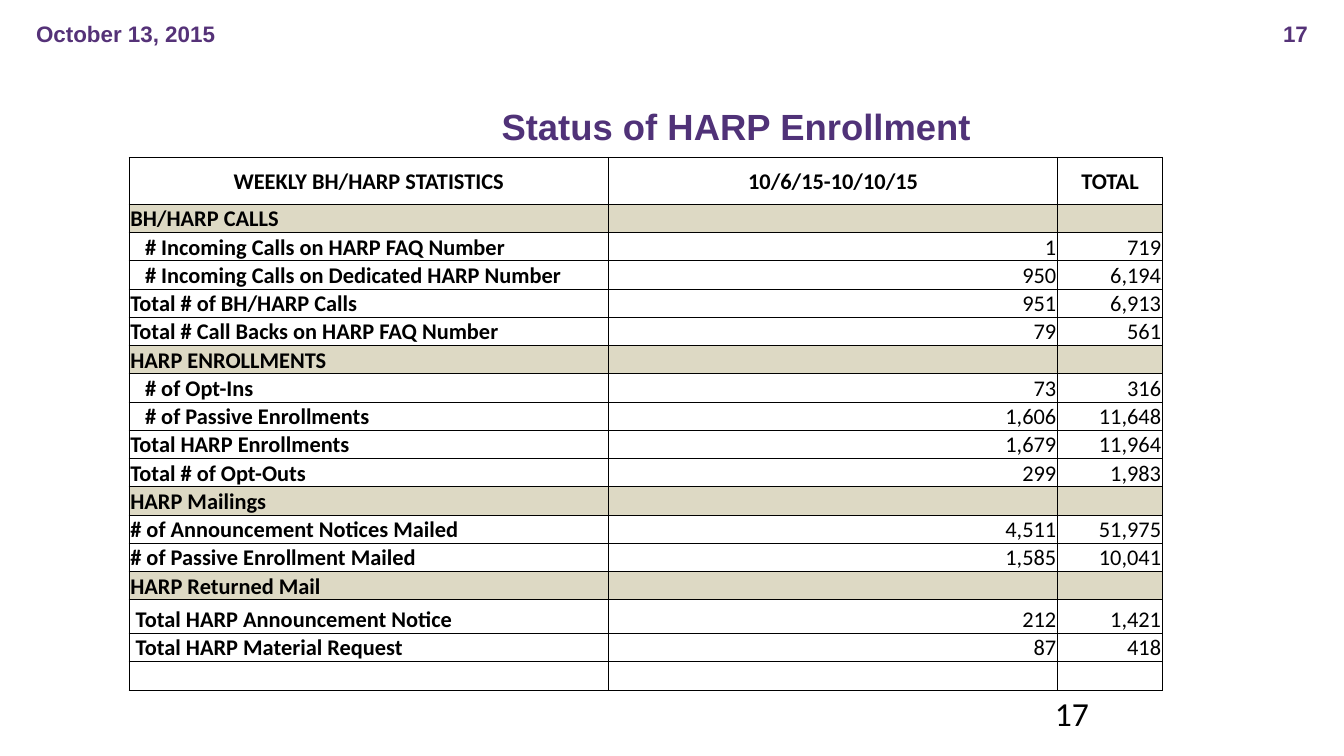
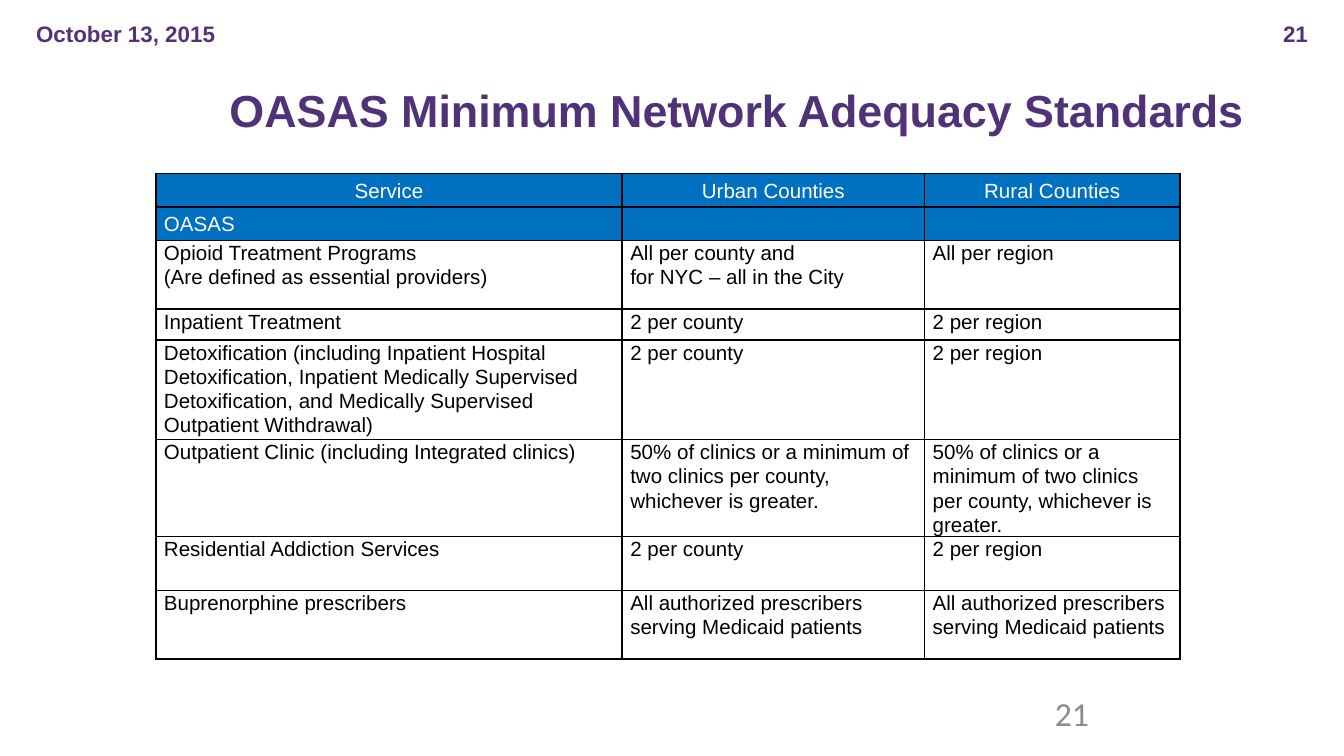
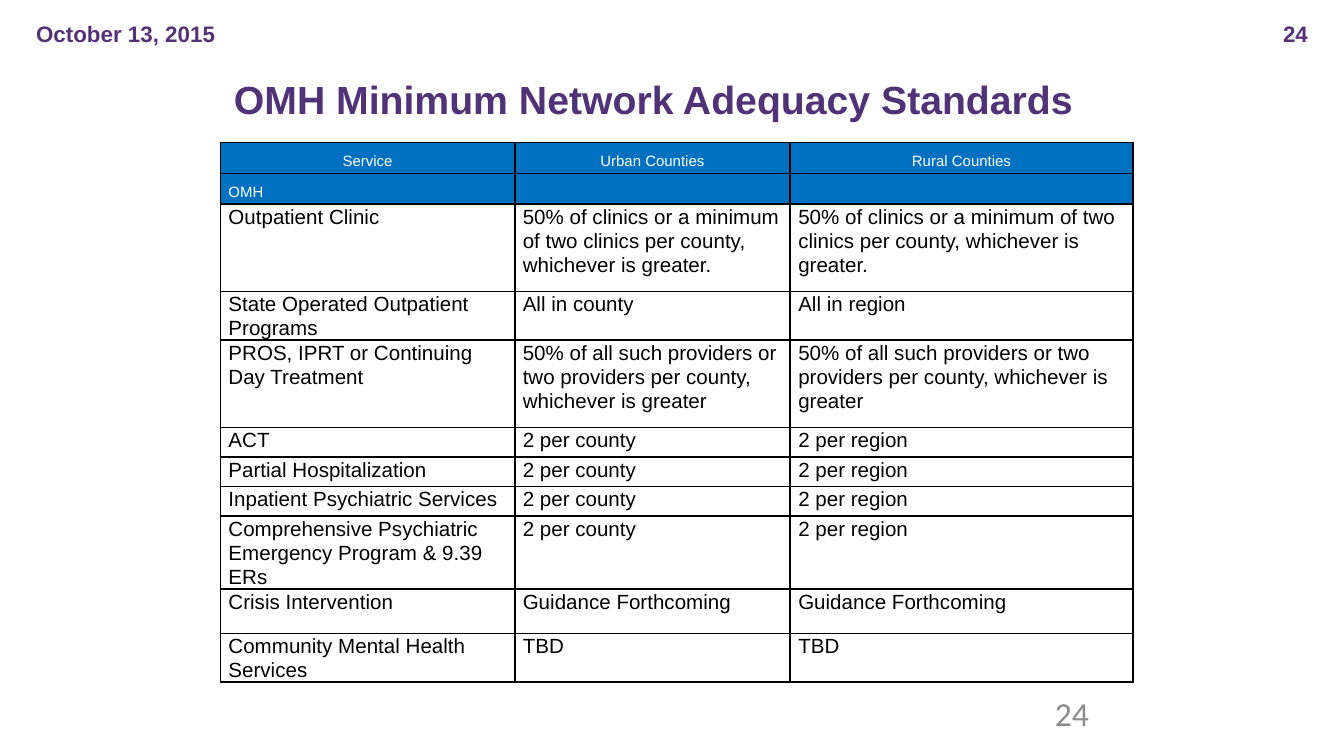
from dataclasses import dataclass

import lxml.etree
import pptx
import pptx.dml.color
import pptx.enum.text
import pptx.oxml.ns
import pptx.util

ALIGN = pptx.enum.text.PP_ALIGN
ANCHOR = pptx.enum.text.MSO_ANCHOR
inch = pptx.util.Inches


@dataclass(frozen=True)
class Theme:
    title: str = "503278"
    mark: str = "553278"
    ink: str = "000000"
    grey: str = "8C8C8C"
    paper: str = "FFFFFF"
    blue: str = "0070C0"
    sand: str = "DDD9C4"
    head: str = "Arial"
    body: str = "Calibri"
    small: float = 8
    cell: float = 11
    note: float = 12
    page: float = 18
    lead: float = 13


THEME = Theme()
WIDE = 10
HIGH = WIDE * 9 / 16
DATE = "October 13, 2015"

CALLS = [
    ("WEEKLY BH/HARP STATISTICS", "10/6/15-10/10/15", "TOTAL"),
    ("BH/HARP CALLS", "", ""),
    ("# Incoming Calls on HARP FAQ Number", "1", "719"),
    ("# Incoming Calls on Dedicated HARP Number", "950", "6,194"),
    ("Total # of BH/HARP Calls", "951", "6,913"),
    ("Total # Call Backs on HARP FAQ Number", "79", "561"),
    ("HARP ENROLLMENTS", "", ""),
    ("# of Opt-Ins", "73", "316"),
    ("# of Passive Enrollments", "1,606", "11,648"),
    ("Total HARP Enrollments", "1,679", "11,964"),
    ("Total # of Opt-Outs", "299", "1,983"),
    ("HARP Mailings", "", ""),
    ("# of Announcement Notices Mailed", "4,511", "51,975"),
    ("# of Passive Enrollment Mailed", "1,585", "10,041"),
    ("HARP Returned Mail", "", ""),
    ("Total HARP Announcement Notice", "212", "1,421"),
    ("Total HARP Material Request", "87", "418"),
    ("", "", ""),
]
INDENT = {2: 0.11, 3: 0.11, 7: 0.11, 8: 0.11, 15: 0.04, 16: 0.04}

HEADS = ("Service", "Urban Counties", "Rural Counties")
PAIR = ("2 per county", "2 per region")
HALF = ("50% of clinics or a minimum of two clinics per county, whichever is greater.",) * 2
SUCH = ("50% of all such providers or two providers per county, whichever is greater",) * 2

OASAS = [
    HEADS,
    ("OASAS", "", ""),
    ("Opioid Treatment Programs\n(Are defined as essential providers)",
     "All per county and\nfor NYC – all in the City", "All per region"),
    ("Inpatient Treatment", *PAIR),
    ("Detoxification (including Inpatient Hospital Detoxification, Inpatient "
     "Medically Supervised Detoxification, and Medically Supervised "
     "Outpatient Withdrawal)", *PAIR),
    ("Outpatient Clinic (including Integrated clinics)", *HALF),
    ("Residential Addiction Services", *PAIR),
    ("Buprenorphine prescribers",
     *("All authorized prescribers serving Medicaid patients",) * 2),
]
OMH = [
    HEADS,
    ("OMH", "", ""),
    ("Outpatient Clinic", *HALF),
    ("State Operated Outpatient Programs", "All in county", "All in region"),
    ("PROS, IPRT or Continuing Day Treatment", *SUCH),
    ("ACT", *PAIR),
    ("Partial Hospitalization", *PAIR),
    ("Inpatient Psychiatric Services", *PAIR),
    ("Comprehensive Psychiatric Emergency Program & 9.39 ERs", *PAIR),
    ("Crisis Intervention", *("Guidance Forthcoming",) * 2),
    ("Community Mental Health Services", *("TBD",) * 2),
]


def stats(row, col):
    top, group = row == 0, CALLS[row][0] and not CALLS[row][1]
    side = ALIGN.CENTER if top else ALIGN.RIGHT if col else ALIGN.LEFT
    pad = 0.01 + (INDENT.get(row, 0) if col == 0 else 0)
    return dict(fill=THEME.sand if group else None, pads=(pad, 0.01, 0.01, 0),
                anchor=ANCHOR.MIDDLE if top else ANCHOR.BOTTOM, align=side,
                font=THEME.body, size=THEME.note, bold=top or col == 0)


def norms(size):
    def look(row, col):
        top = row < 2
        return dict(fill=THEME.blue if top else None, pads=(0.06, 0, 0.06, 0),
                    anchor=ANCHOR.MIDDLE if top else ANCHOR.TOP,
                    align=ALIGN.LEFT if row else ALIGN.CENTER,
                    size=size if top else THEME.cell, lead=THEME.lead,
                    color=THEME.paper if top else THEME.ink)
    return look


SLIDES = [
    dict(page="17", tone=THEME.ink, title="Status of HARP Enrollment",
         box=(0.96, 0.71, 9.04, 0.45), size=19.5, align=ALIGN.CENTER,
         data=CALLS, at=(0.96, 1.17), cols=(3.57, 3.34, 0.78),
         rows=[0.35] + [0.21] * 14 + [0.25] + [0.21] * 2, line=0.5, look=stats),
    dict(page="21", tone=THEME.grey, title="OASAS Minimum Network Adequacy Standards",
         box=(0.96, 0.59, 9.04, 0.45), size=24, align=ALIGN.CENTER,
         data=OASAS, at=(1.16, 1.29), cols=(3.47, 2.25, 1.9),
         rows=[0.25, 0.25, 0.51, 0.23, 0.74, 0.72, 0.4, 0.51],
         line=1, look=norms(THEME.cell)),
    dict(page="24", tone=THEME.grey, title="OMH Minimum Network Adequacy Standards",
         box=(1.64, 0.51, 6.56, 0.45), size=21, align=ALIGN.LEFT,
         data=OMH, at=(1.64, 1.06), cols=(2.19, 2.05, 2.55),
         rows=[0.23, 0.23, 0.65, 0.36, 0.65] + [0.22] * 3 + [0.54, 0.33, 0.36],
         line=1, look=norms(THEME.small)),
]


def write(frame, text, *, size, font=THEME.head, color=THEME.ink, bold=False,
          align=ALIGN.LEFT, anchor=ANCHOR.MIDDLE, lead=None):
    frame.word_wrap = True
    frame.vertical_anchor = anchor
    frame.text = text
    for para in frame.paragraphs:
        para.alignment = align
        if lead:
            para.line_spacing = pptx.util.Pt(lead)
        for run in para.runs:
            run.font.size = pptx.util.Pt(size)
            run.font.name = font
            run.font.bold = bold
            run.font.color.rgb = pptx.dml.color.RGBColor.from_string(color)
        if not para.runs:
            lxml.etree.SubElement(para._p, pptx.oxml.ns.qn("a:endParaRPr"),
                                  sz=str(int(size * 100)))


def label(slide, text, box, **form):
    shape = slide.shapes.add_textbox(*map(inch, box))
    write(shape.text_frame, text, **form)
    return shape


def edge(cell, width):
    props = cell._tc.get_or_add_tcPr()
    name = pptx.oxml.ns.qn
    for side in "LRTB":
        line = lxml.etree.SubElement(props, name("a:ln" + side),
                                     w=str(pptx.util.Pt(width)))
        fill = lxml.etree.SubElement(line, name("a:solidFill"))
        lxml.etree.SubElement(fill, name("a:srgbClr"), val=THEME.ink)


def grid(slide, part):
    data, cols, rows = part["data"], part["cols"], part["rows"]
    size = sum(cols), sum(rows)
    table = slide.shapes.add_table(len(rows), len(cols),
                                   *map(inch, part["at"] + size)).table
    table.first_row = table.horz_banding = False
    for col, width in zip(table.columns, cols):
        col.width = inch(width)
    for row, height in zip(table.rows, rows):
        row.height = inch(height)
    for r, texts in enumerate(data):
        for c, text in enumerate(texts):
            cell = table.cell(r, c)
            form = part["look"](r, c)
            fill, pads, anchor = (form.pop(key) for key in ("fill", "pads", "anchor"))
            edge(cell, part["line"])
            if fill:
                cell.fill.solid()
                cell.fill.fore_color.rgb = pptx.dml.color.RGBColor.from_string(fill)
            else:
                cell.fill.background()
            (cell.margin_left, cell.margin_top,
             cell.margin_right, cell.margin_bottom) = map(inch, pads)
            write(cell.text_frame, text, **form)
            cell.vertical_anchor = anchor


def build(deck, layout, part):
    slide = deck.slides.add_slide(layout)
    title = slide.shapes.title
    title.left, title.top, title.width, title.height = map(inch, part["box"])
    title.text_frame.auto_size = pptx.enum.text.MSO_AUTO_SIZE.NONE
    write(title.text_frame, part["title"], size=part["size"], color=THEME.title,
          bold=True, align=part["align"])
    label(slide, part["page"], (9.08, 0.1, 0.75, 0.3), size=THEME.note,
          color=THEME.mark, bold=True, align=ALIGN.RIGHT)
    label(slide, part["page"], (7.75, 5.11, 2.25, 0.3), size=THEME.page,
          font=THEME.body, color=part["tone"], anchor=ANCHOR.TOP)
    grid(slide, part)
    return slide


def main():
    deck = pptx.Presentation()
    deck.slide_width, deck.slide_height = inch(WIDE), inch(HIGH)
    layout = deck.slide_layouts[5]
    slides = [build(deck, layout, part) for part in SLIDES]
    date = label(slides[0], DATE, (0.17, 0.1, 2.33, 0.3), size=THEME.note,
                 color=THEME.mark, bold=True)
    layout.shapes.element.append(date.element)
    deck.save("out.pptx")


if __name__ == "__main__":
    main()
